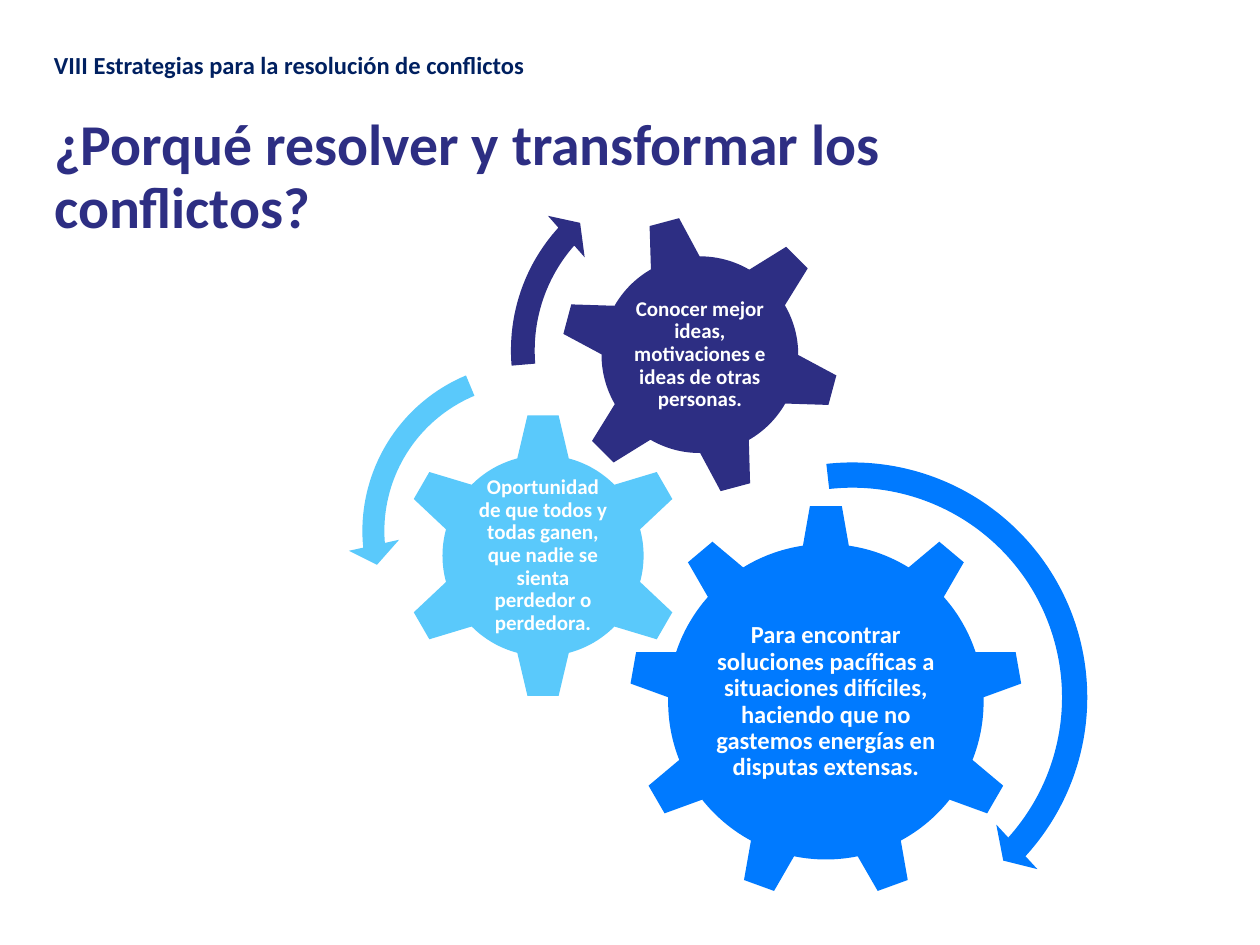
import pptx
import pptx.util
import pptx.dml.color
import pptx.enum.shapes
import pptx.enum.text

MSO = pptx.enum.shapes.MSO_SHAPE
MIDDLE = pptx.enum.text.MSO_ANCHOR.MIDDLE
ALIGN = pptx.enum.text.PP_ALIGN
COLORS = {"navy": "2D2E83", "blue": "007AFF", "sky": "5AC9FB", "ink": "002060", "white": "FFFFFF"}

prs = pptx.Presentation()
prs.slide_width = pptx.util.Inches(10)
prs.slide_height = pptx.util.Inches(7.5)
COL = prs.slide_width / 100
ROW = prs.slide_height / 75


def centered(x, y, w, h):
    return [round(v) for v in ((x - w / 2) * COL, (y - h / 2) * ROW, w * COL, h * ROW)]


def write(tf, text, size, color, align):
    tf.word_wrap = True
    p = tf.paragraphs[0]
    p.text = text
    p.alignment = align
    p.font.name = "Calibri"
    p.font.size = pptx.util.Pt(size)
    p.font.bold = True
    p.font.color.rgb = pptx.dml.color.RGBColor.from_string(COLORS[color])
    return p


s = prs.slides.add_slide(prs.slide_layouts[5])
title = s.shapes.title
title.left, title.top, title.width, title.height = centered(46.4, 14.15, 86.2, 14.5)
tf = title.text_frame
tf.auto_size = pptx.enum.text.MSO_AUTO_SIZE.NONE
tf.vertical_anchor = MIDDLE
p = write(tf, "¿Porqué resolver y transformar los conflictos?", 33, "navy", ALIGN.LEFT)
p.line_spacing = 0.9

gears = [
    (MSO.GEAR_9, "blue", 65.55, 55.7, 31.3, 0, 18.7, 16.1, 14,
     "Para encontrar soluciones pacíficas a situaciones difíciles, "
     "haciendo que no gastemos energías en disputas extensas."),
    (MSO.GEAR_6, "sky", 43.1, 44.1, 22.8, 0, 11.3, 11.2, 12,
     "Oportunidad de que todos y todas ganen, que nadie se sienta perdedor o perdedora."),
    (MSO.GEAR_6, "navy", 55.55, 28.15, 22.3, 345, 12.5, 12.5, 12,
     "Conocer mejor ideas, motivaciones e ideas de otras personas."),
]
arrows = [
    (MSO.CIRCULAR_ARROW, "blue", 67.65, 55.35, 40.1, (0.05, 2.99, 25.36, 158.19, 0.06)),
    (MSO.LEFT_CIRCULAR_ARROW, "sky", 42.15, 42.15, 29.1, (0.06, 4.3, 104.89, 148.38, 0.07)),
    (MSO.CIRCULAR_ARROW, "navy", 55, 27.8, 31.4, (0.06, 3.94, 133.14, 105.08, 0.07)),
]

wheels = [(kind, color, x, y, size, turn, ()) for kind, color, x, y, size, turn, *_ in gears]
wheels += [(kind, color, x, y, size, 0, adj) for kind, color, x, y, size, adj in arrows]
for kind, color, x, y, size, turn, adj in wheels:
    sp = s.shapes.add_shape(kind, *centered(x, y, size, size))
    sp.rotation = turn
    sp.shadow.inherit = False
    sp.fill.solid()
    sp.fill.fore_color.rgb = pptx.dml.color.RGBColor.from_string(COLORS[color])
    sp.line.fill.background()
    for i, value in enumerate(adj):
        sp.adjustments[i] = value

for _, _, x, y, _, _, w, h, points, text in gears:
    tf = s.shapes.add_textbox(*centered(x, y, w, h)).text_frame
    tf.margin_left = tf.margin_right = tf.margin_top = tf.margin_bottom = pptx.util.Inches(0.02)
    tf.vertical_anchor = MIDDLE
    p = write(tf, text, points, "white", ALIGN.CENTER)
    p.line_spacing = 0.9

tf = s.shapes.add_textbox(*centered(28, 5.2, 49.4, 3.4)).text_frame
write(tf, "VIII Estrategias para la resolución de conflictos", 14, "ink", ALIGN.LEFT)

prs.save("out.pptx")
